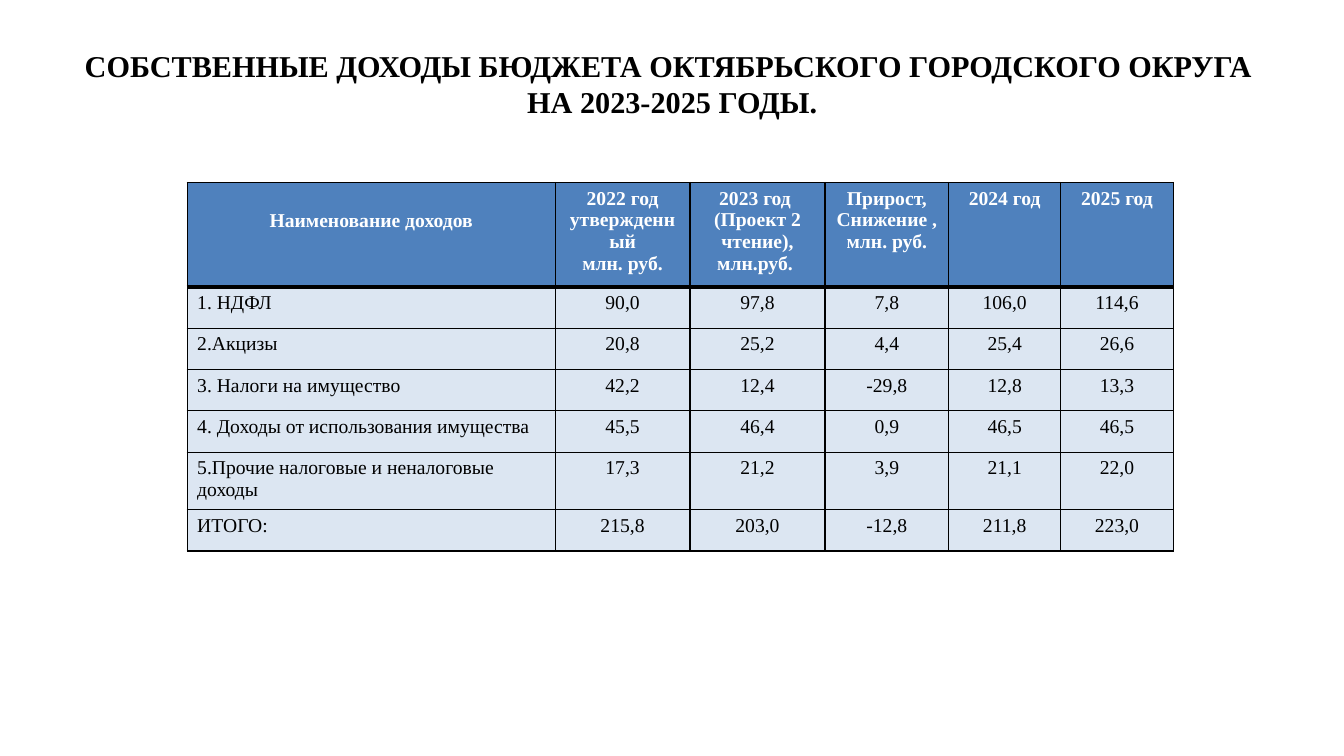
from typing import NamedTuple

from lxml import etree
from pptx import Presentation
from pptx import util as u
from pptx.dml.color import RGBColor
from pptx.enum import text
from pptx.oxml.ns import qn

FONT = "Times New Roman"
BLACK, WHITE, HEADER_BLUE, ROW_BLUE = "000000", "FFFFFF", "4F81BD", "DCE6F2"
THIN, THICK = 1, 3
CENTER, LEFT = text.PP_ALIGN.CENTER, text.PP_ALIGN.LEFT


class Column(NamedTuple):
    heading: str
    width: float
    align: text.PP_ALIGN = CENTER
    heading_top: float = 0.13


class Income(NamedTuple):
    cells: tuple[str, ...]
    height: float = 1.04


class CellStyle(NamedTuple):
    fill: str
    color: str
    bold: bool
    top: int
    bottom: int


COLUMNS = [
    Column("Наименование доходов", 9.27, heading_top=0.69),
    Column("2022 год утвержденный\nмлн. руб.", 3.4),
    Column("2023 год \n(Проект 2 чтение), млн.руб. ", 3.4),
    Column("Прирост,\nСнижение ,\nмлн. руб.", 3.12),
    Column("2024 год", 2.82),
    Column("2025 год", 2.84),
]
INCOMES = [
    Income(("1. НДФЛ", "90,0", "97,8", "7,8", "106,0", "114,6")),
    Income(("2.Акцизы", "20,8", "25,2", "4,4", "25,4", "26,6")),
    Income(("3. Налоги на имущество", "42,2", "12,4", "-29,8", "12,8", "13,3")),
    Income(("4. Доходы от использования имущества", "45,5", "46,4", "0,9", "46,5", "46,5")),
    Income(("5.Прочие налоговые и неналоговые доходы", "17,3", "21,2", "3,9", "21,1", "22,0"), 1.45),
    Income(("ИТОГО:", "215,8", "203,0", "-12,8", "211,8", "223,0")),
]
HEADER_HEIGHT = 2.21
HEADER = CellStyle(HEADER_BLUE, WHITE, True, THIN, THICK)
FIRST_ROW = CellStyle(ROW_BLUE, BLACK, False, THICK, THIN)
OTHER_ROW = CellStyle(ROW_BLUE, BLACK, False, THIN, THIN)


def rgb(hex_color: str) -> RGBColor:
    return RGBColor.from_string(hex_color)


def style_text(frame, size: float, color: str, bold: bool, align) -> None:
    for paragraph in frame.paragraphs:
        paragraph.alignment = align
        paragraph.font.name = FONT
        paragraph.font.size = u.Pt(size)
        paragraph.font.bold = bold
        paragraph.font.color.rgb = rgb(color)


def add_borders(cell, top: int, bottom: int) -> None:
    """Must run before the fill is set: borders precede it in the cell properties."""
    properties = cell._tc.get_or_add_tcPr()
    for side, width in (("L", THIN), ("R", THIN), ("T", top), ("B", bottom)):
        line = etree.SubElement(properties, qn(f"a:ln{side}"), w=str(u.Pt(width)))
        fill = etree.SubElement(line, qn("a:solidFill"))
        etree.SubElement(fill, qn("a:srgbClr"), val=BLACK)


def fill_cell(cell, words: str, style: CellStyle, align, margin_top: float = 0.13) -> None:
    add_borders(cell, style.top, style.bottom)
    cell.fill.solid()
    cell.fill.fore_color.rgb = rgb(style.fill)
    cell.margin_left = cell.margin_right = u.Cm(0.25)
    cell.margin_top, cell.margin_bottom = u.Cm(margin_top), u.Cm(0.13)
    cell.text_frame.text = words
    style_text(cell.text_frame, 14, style.color, style.bold, align)


def add_title(slide) -> None:
    title = slide.shapes.add_textbox(u.Cm(1.7), u.Cm(0.76), u.Cm(30.48), u.Cm(2.67))
    frame = title.text_frame
    frame.word_wrap = True
    frame.vertical_anchor = text.MSO_ANCHOR.MIDDLE
    frame.text = "СОБСТВЕННЫЕ ДОХОДЫ БЮДЖЕТА ОКТЯБРЬСКОГО ГОРОДСКОГО ОКРУГА \vНА 2023-2025 ГОДЫ."
    style_text(frame, 21.6, BLACK, True, CENTER)


def add_income_table(slide) -> None:
    heights = [HEADER_HEIGHT] + [income.height for income in INCOMES]
    total_width = sum(column.width for column in COLUMNS)
    table = slide.shapes.add_table(
        len(heights), len(COLUMNS),
        u.Cm(4.72), u.Cm(4.6), u.Cm(total_width), u.Cm(sum(heights)),
    ).table
    for row, height in zip(table.rows, heights):
        row.height = u.Cm(height)
    for c, column in enumerate(COLUMNS):
        table.columns[c].width = u.Cm(column.width)
        fill_cell(table.cell(0, c), column.heading, HEADER, CENTER, column.heading_top)
        for r, income in enumerate(INCOMES, start=1):
            style = FIRST_ROW if r == 1 else OTHER_ROW
            align = LEFT if c == 0 else column.align
            fill_cell(table.cell(r, c), income.cells[c], style, align)


def main() -> None:
    deck = Presentation()
    deck.slide_width, deck.slide_height = u.Cm(33.87), u.Cm(19.05)
    slide = deck.slides.add_slide(deck.slide_layouts[6])
    add_title(slide)
    add_income_table(slide)
    deck.save("out.pptx")


if __name__ == "__main__":
    main()
